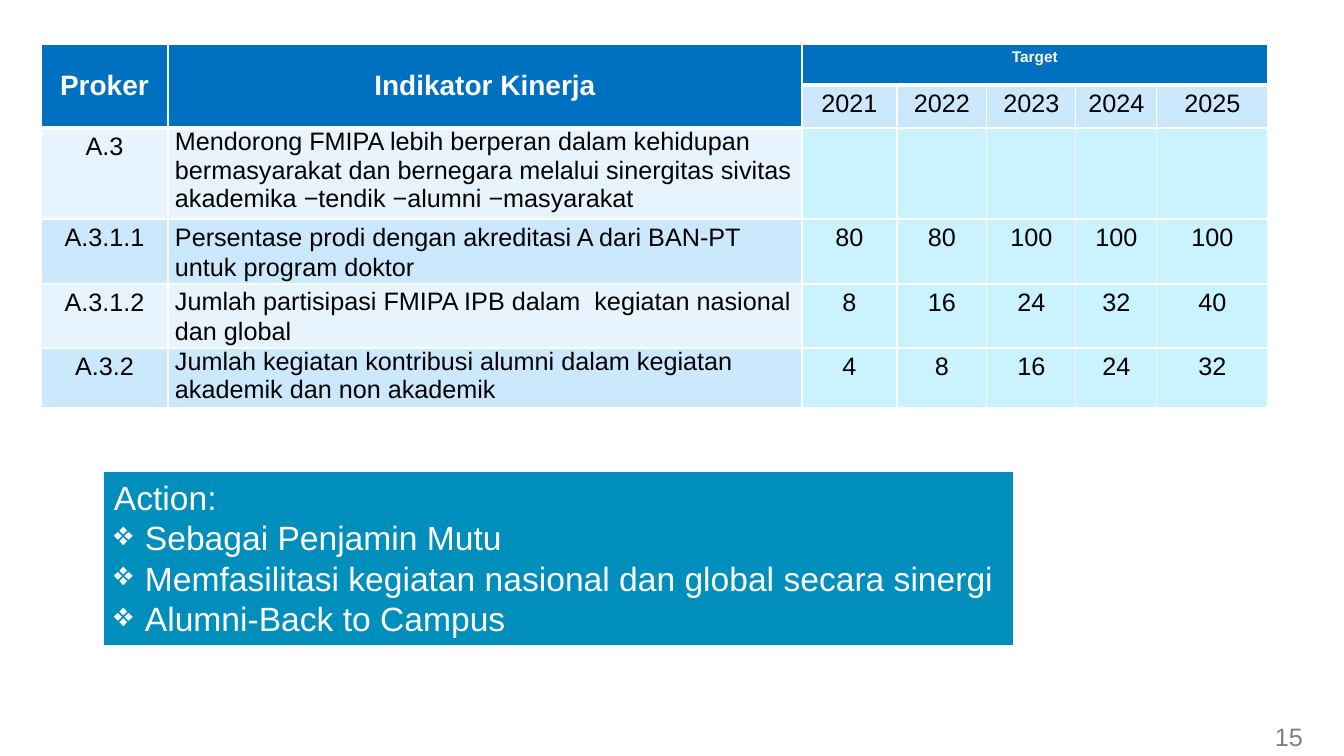
from lxml import etree
from pptx import Presentation, util as u
from pptx.dml.color import RGBColor
from pptx.enum import shapes, text
from pptx.oxml.ns import qn

# Content
HEADINGS = ["Proker", "Indikator Kinerja", "Target"]
YEARS = ["2021", "2022", "2023", "2024", "2025"]
# code, indicator, yearly targets
PROGRAMS = [
    ("A.3", "Mendorong FMIPA lebih berperan dalam kehidupan bermasyarakat dan bernegara "
            "melalui sinergitas sivitas akademika −tendik −alumni −masyarakat", [""] * 5),
    ("A.3.1.1", "Persentase prodi dengan akreditasi A dari BAN-PT untuk program doktor",
     ["80", "80", "100", "100", "100"]),
    ("A.3.1.2", "Jumlah partisipasi FMIPA IPB dalam  kegiatan nasional dan global",
     ["8", "16", "24", "32", "40"]),
    ("A.3.2", "Jumlah kegiatan kontribusi alumni dalam kegiatan akademik dan non akademik",
     ["4", "8", "16", "24", "32"]),
]
SPACED_CODES = {"A.3.1.1", "A.3.1.2"}
ACTIONS = ["Sebagai Penjamin Mutu",
           "Memfasilitasi kegiatan nasional dan global secara sinergi",
           "Alumni-Back to Campus"]
PAGE = "15"

COLORS = {"header": "0070C0", "dark_band": "CCE8FD", "light_band": "E7F4FE",
          "target": "CBF2FF", "action": "008EBC", "white": "FFFFFF",
          "black": "000000", "page": "808080"}
FONT = "Arial"
PX = 914400 / 100.8
COLUMNS = [127, 634, 95, 90, 89, 81, 111]
ROWS = [41, 43, 91, 65, 64, 60]


def px(length):
    return u.Emu(round(length * PX))


def box(left, top, width, height):
    return px(left), px(top), px(width), px(height)


def rgb(name):
    return RGBColor.from_string(COLORS[name])


def write(paragraph, words, size=18, color="black", bold=False, align=None,
          after=None, spacing=None, bullet=None):
    if bullet:
        props = paragraph._p.get_or_add_pPr()
        props.set("marL", str(px(31)))
        props.set("indent", str(-px(31)))
        etree.SubElement(props, qn("a:buChar")).set("char", bullet)
    if align is not None:
        paragraph.alignment = align
    if after is not None:
        paragraph.space_after = u.Pt(after)
    if spacing is not None:
        paragraph.line_spacing = spacing
    paragraph.font.size = u.Pt(size)
    if words:
        run = paragraph.add_run()
        run.text = words
        run.font.name, run.font.size, run.font.bold = FONT, u.Pt(size), bold
        run.font.color.rgb = rgb(color)


def style_cell(cell, fill, bottom=1):
    props = cell._tc.get_or_add_tcPr()
    for side, width in (("L", 1), ("R", 1), ("T", 1), ("B", bottom)):
        line = etree.SubElement(props, qn("a:ln" + side), w=str(u.Pt(width)))
        solid = etree.SubElement(line, qn("a:solidFill"))
        etree.SubElement(solid, qn("a:srgbClr")).set("val", COLORS["white"])
    cell.fill.solid()
    cell.fill.fore_color.rgb = rgb(fill)


def set_margins(cell, side, vertical):
    cell.margin_left = cell.margin_right = px(side)
    cell.margin_top = cell.margin_bottom = px(vertical)


def add_targets(table, slide):
    grid = slide.shapes.add_table(len(ROWS), len(COLUMNS),
                                  *box(41, 44, sum(COLUMNS), sum(ROWS))).table
    for column, width in zip(grid.columns, COLUMNS):
        column.width = px(width)
    for row, height in zip(grid.rows, ROWS):
        row.height = px(height)

    for r, words in enumerate(table):
        band = "dark_band" if r % 2 else "light_band"
        for c, word in enumerate(words):
            cell = grid.cell(r, c)
            heading = r == 0 or (r == 1 and c < 2)
            if heading:
                fill = "header"
            elif r > 1 and c > 1:
                fill = "target"
            else:
                fill = band
            style_cell(cell, fill, bottom=3 if heading else 1)
            set_margins(cell, 10, 5)
            look = {"align": text.PP_ALIGN.CENTER}
            if heading:
                look.update(size=20 if c < 2 else 11, color="white", bold=True)
                if c < 2:
                    cell.vertical_anchor = text.MSO_ANCHOR.MIDDLE
            elif c == 1:
                set_margins(cell, 7, 0)
                look = {"after": 6}
                if words[0] in SPACED_CODES:
                    look["spacing"] = 1.07
                    cell.vertical_anchor = text.MSO_ANCHOR.MIDDLE
            write(cell.text_frame.paragraphs[0], word, **look)

    for c in (0, 1):
        grid.cell(0, c).merge(grid.cell(1, c))
    grid.cell(0, 2).merge(grid.cell(0, len(COLUMNS) - 1))


def add_actions(slide):
    panel = slide.shapes.add_shape(shapes.MSO_SHAPE.RECTANGLE, *box(104, 472, 909, 173))
    panel.shadow.inherit = False
    panel.fill.solid()
    panel.fill.fore_color.rgb = rgb("action")
    panel.line.fill.background()
    frame = panel.text_frame
    frame.word_wrap = False
    frame.auto_size = text.MSO_AUTO_SIZE.SHAPE_TO_FIT_TEXT
    frame.vertical_anchor = text.MSO_ANCHOR.TOP
    look = {"size": 24, "color": "white", "align": text.PP_ALIGN.LEFT}
    write(frame.paragraphs[0], "Action:", **look)
    for action in ACTIONS:
        write(frame.add_paragraph(), action, bullet="❖", **look)


def main():
    deck = Presentation()
    deck.slide_width, deck.slide_height = px(1344), px(756)
    slide = deck.slides.add_slide(deck.slide_layouts[6])

    # Target table
    table = [HEADINGS + [""] * 4, ["", ""] + YEARS]
    table += [[code, indicator] + targets for code, indicator, targets in PROGRAMS]
    add_targets(table, slide)

    # Action panel
    add_actions(slide)

    # Page number
    page = slide.shapes.add_textbox(*box(1265, 716, 55, 40)).text_frame
    page.word_wrap = True
    write(page.paragraphs[0], PAGE, color="page")

    deck.save("out.pptx")


if __name__ == "__main__":
    main()
